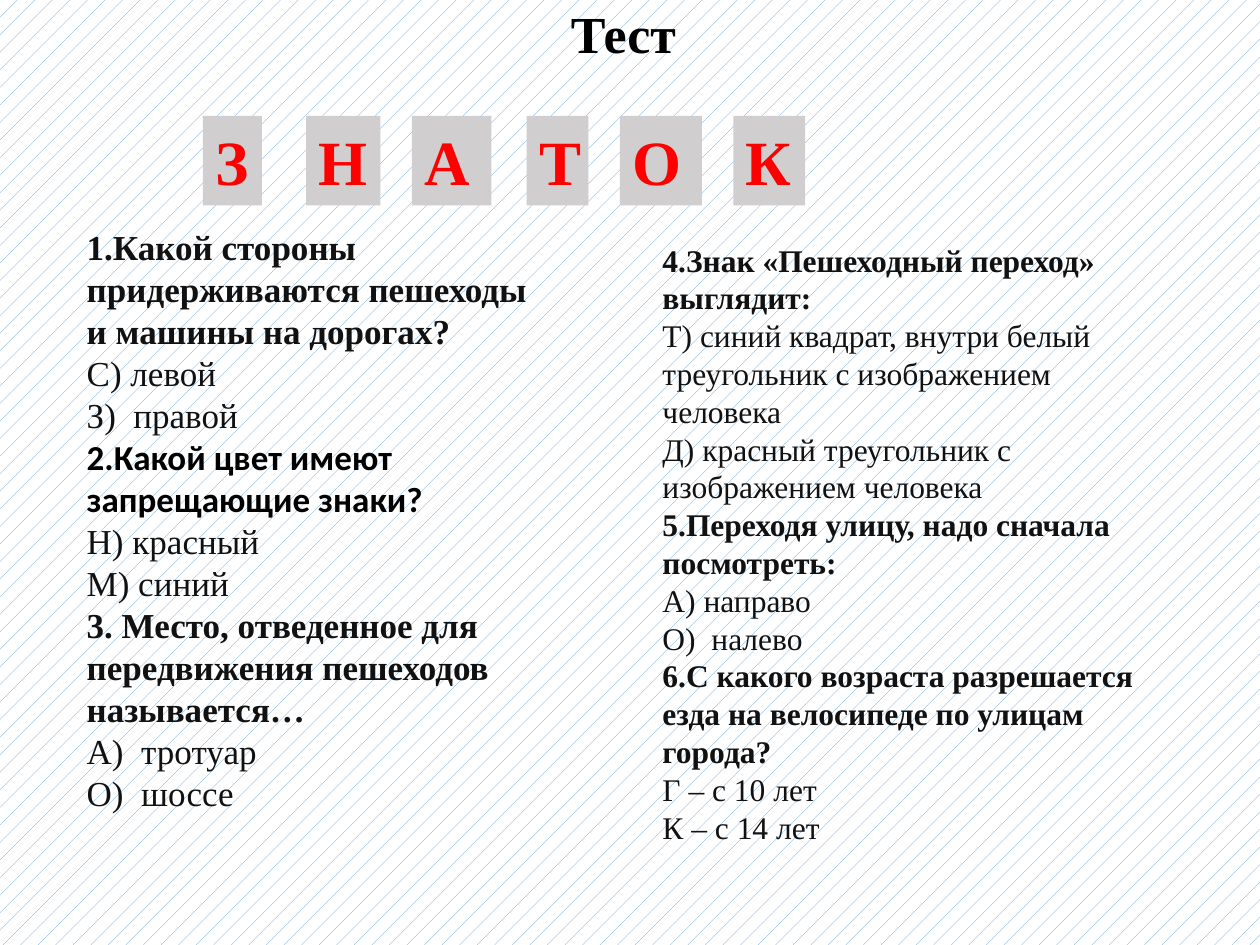
import pptx
import pptx.util
import pptx.dml.color
import pptx.enum.dml
import pptx.enum.shapes
import pptx.enum.text
import pptx.oxml.ns
import lxml.etree

Inches = pptx.util.Inches
ALIGN = pptx.enum.text.PP_ALIGN
ANCHOR = pptx.enum.text.MSO_ANCHOR
GROW = pptx.enum.text.MSO_AUTO_SIZE.SHAPE_TO_FIT_TEXT

COLORS = {"ink": "111111", "black": "000000", "red": "FF0000",
          "tile": "D0CECE", "line": "5B9BD5", "paper": "FFFFFF"}
SERIF, SANS = "Times New Roman", "Calibri"

# Each question: number (None if typed in the text), text, font, color, answers
LEFT = [
    (1, "Какой стороны придерживаются пешеходы и машины на дорогах?",
     SERIF, "ink", ["С) левой", "З)  правой"]),
    (2, "Какой цвет имеют запрещающие знаки?",
     SANS, "black", ["Н) красный", "М) синий"]),
    (None, "3. Место, отведенное для передвижения пешеходов называется…",
     SERIF, "ink", ["А)  тротуар", "О)  шоссе"]),
]
RIGHT = [
    (4, "Знак «Пешеходный переход» выглядит:", SERIF, "ink",
     ["Т) синий квадрат, внутри белый треугольник с изображением человека",
      "Д) красный треугольник с изображением человека"]),
    (5, "Переходя улицу, надо сначала посмотреть:",
     SERIF, "ink", ["А) направо", "О)  налево"]),
    (6, "С какого возраста разрешается езда на велосипеде по улицам города?",
     SERIF, "ink", ["Г – с 10 лет", "К – с 14 лет"]),
]
COLUMNS = [((0.59, 1.74, 3.76, 4.81), 20, LEFT),
           ((5.16, 1.86, 4.16, 4.95), 18, RIGHT)]

# Letter, left edge, width
TILES = [("З", 1.61, 0.47), ("Н", 2.43, 0.59), ("А", 3.27, 0.63),
         ("Т", 4.18, 0.49), ("О", 4.92, 0.65), ("К", 5.82, 0.57)]
TILE_TOP, TILE_HIGH = 0.92, 0.71


def color(name):
    return pptx.dml.color.RGBColor.from_string(COLORS[name])


def style(para, size, font, tint, bold):
    for run in para.runs:
        run.font.size = pptx.util.Pt(size)
        run.font.name = font
        run.font.color.rgb = color(tint)
        run.font.bold = bold


def number(para, start):
    props = para._p.get_or_add_pPr()
    props.set("marL", "0")
    props.set("indent", "0")
    lxml.etree.SubElement(props, pptx.oxml.ns.qn("a:buAutoNum"),
                          type="arabicPeriod", startAt=str(start))


def add_column(slide, box, size, items):
    frame = slide.shapes.add_textbox(*map(Inches, box)).text_frame
    frame.word_wrap = True
    frame.auto_size = GROW
    rows = []
    for num, ask, font, tint, answers in items:
        rows.append((num, ask, font, tint, True))
        rows += [(None, answer, SERIF, "ink", False) for answer in answers]
    for i, (num, text, font, tint, bold) in enumerate(rows):
        para = frame.add_paragraph() if i else frame.paragraphs[0]
        para.text = text
        style(para, size, font, tint, bold)
        if num:
            number(para, num)


def add_tile(slide, letter, left, width):
    tile = slide.shapes.add_shape(
        pptx.enum.shapes.MSO_SHAPE.RECTANGLE, Inches(left), Inches(TILE_TOP),
        Inches(width), Inches(TILE_HIGH))
    tile.shadow.inherit = False
    tile.fill.solid()
    tile.fill.fore_color.rgb = color("tile")
    tile.line.fill.background()
    frame = tile.text_frame
    frame.word_wrap = False
    frame.auto_size = GROW
    frame.vertical_anchor = ANCHOR.TOP
    frame.text = letter
    para = frame.paragraphs[0]
    para.alignment = ALIGN.LEFT
    style(para, 36, SERIF, "red", True)


def add_title(slide):
    title = slide.shapes.title
    title.left, title.top = Inches(0.69), Inches(0.4)
    title.width, title.height = Inches(8.62), Inches(0.52)
    frame = title.text_frame
    frame.text = "Тест \v"
    frame.auto_size = pptx.enum.text.MSO_AUTO_SIZE.NONE
    frame.vertical_anchor = ANCHOR.MIDDLE
    para = frame.paragraphs[0]
    para.alignment = ALIGN.CENTER
    para.line_spacing = 0.9
    style(para, 29.7, SERIF, "black", True)


def main():
    deck = pptx.Presentation()
    deck.slide_width, deck.slide_height = Inches(10), Inches(7.5)
    slide = deck.slides.add_slide(deck.slide_layouts[5])
    fill = slide.background.fill
    fill.patterned()
    fill.pattern = pptx.enum.dml.MSO_PATTERN.PERCENT_5
    fill.fore_color.rgb = color("line")
    fill.back_color.rgb = color("paper")
    add_title(slide)
    for column in COLUMNS:
        add_column(slide, *column)
    for tile in TILES:
        add_tile(slide, *tile)
    deck.save("out.pptx")


if __name__ == "__main__":
    main()
